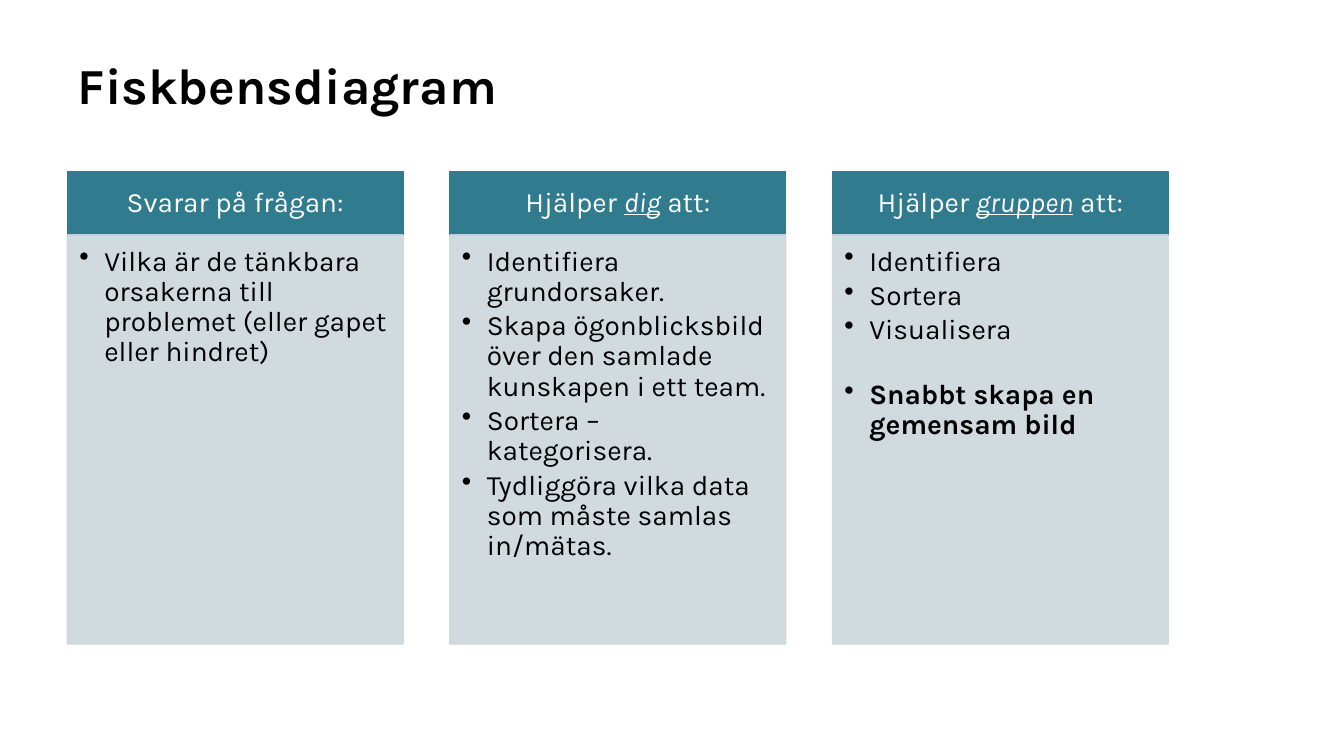
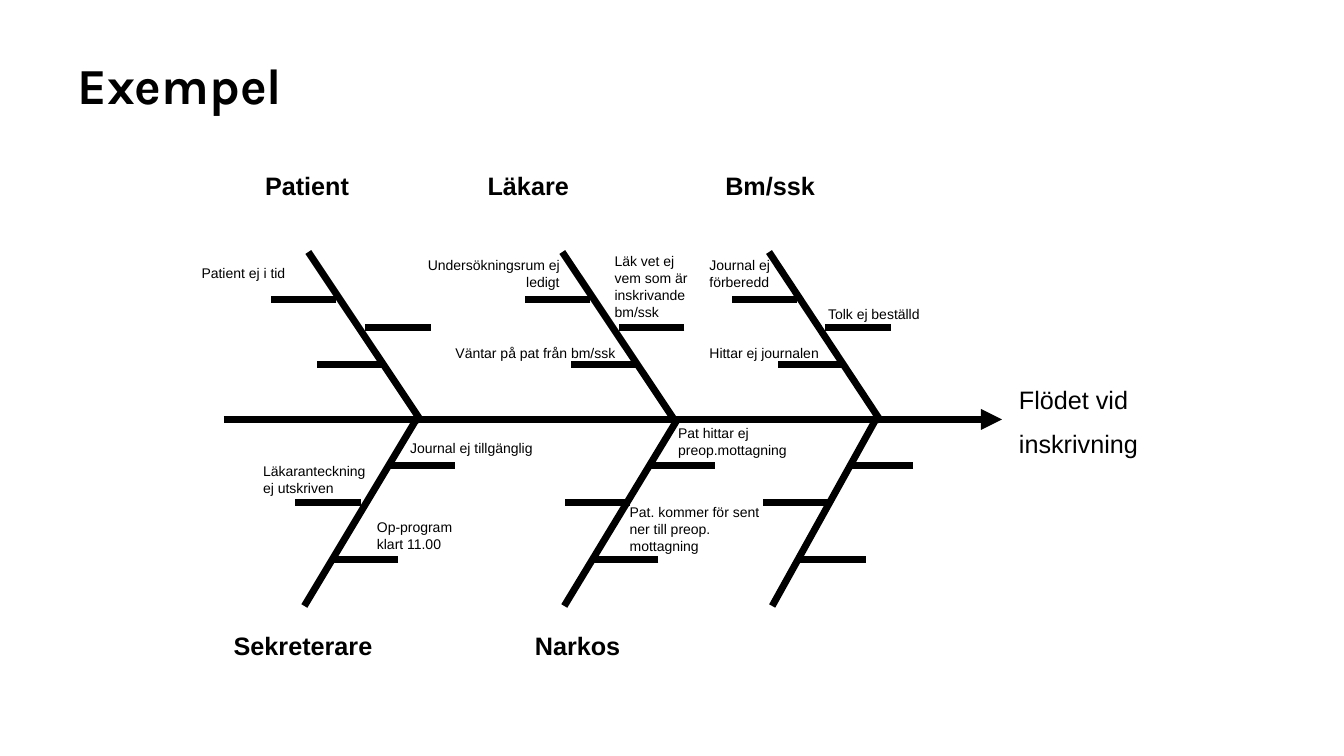
"""Builds two slides about the fishbone diagram."""
from dataclasses import dataclass

from lxml import etree
from pptx import Presentation
from pptx.dml.color import RGBColor
from pptx.enum.dml import MSO_LINE
from pptx.enum.shapes import MSO_CONNECTOR, MSO_SHAPE
from pptx.enum.text import MSO_ANCHOR, MSO_AUTO_SIZE, PP_ALIGN
from pptx.oxml.ns import qn
from pptx.util import Cm, Pt

LEFT, CENTER, RIGHT = PP_ALIGN.LEFT, PP_ALIGN.CENTER, PP_ALIGN.RIGHT
TOP, MIDDLE = MSO_ANCHOR.TOP, MSO_ANCHOR.MIDDLE
FIXED = MSO_AUTO_SIZE.NONE
RECTANGLE, STRAIGHT, SOLID = MSO_SHAPE.RECTANGLE, MSO_CONNECTOR.STRAIGHT, MSO_LINE.SOLID
TITLE_ONLY = 5


@dataclass(frozen=True)
class Theme:
    """Colours, fonts and type sizes of the deck."""
    ink: RGBColor = RGBColor(0x00, 0x00, 0x00)
    paper: RGBColor = RGBColor(0xFF, 0xFF, 0xFF)
    teal: RGBColor = RGBColor(0x30, 0x7C, 0x8E)
    mist: RGBColor = RGBColor(0xCD, 0xD7, 0xDB)
    mist_alpha: int = 90
    main_font: str = "Karla"
    diagram_font: str = "Arial"
    title_size: int = 36
    card_size: int = 20
    heading_size: int = 18
    cause_size: int = 10
    stroke: int = 5


def set_values(target, values):
    """Sets each attribute in values on the target."""
    for name, value in values.items():
        setattr(target, name, value)


class SlideBuilder:
    """Holds the deck, its theme and the current slide."""

    def __init__(self, theme):
        """Starts a wide deck."""
        self.theme = theme
        self.deck = Presentation()
        self.deck.slide_width, self.deck.slide_height = Cm(33.87), Cm(19.05)
        self.page = None

    def start(self, title):
        """Adds a slide with its title."""
        self.page = self.deck.slides.add_slide(self.deck.slide_layouts[TITLE_ONLY])
        box = self.page.shapes.title
        set_values(box, {"left": Cm(1.7), "top": Cm(1), "width": Cm(30.48), "height": Cm(2.08)})
        set_values(box.text_frame, {"auto_size": FIXED, "vertical_anchor": MIDDLE})
        self.add_text(box.text_frame.paragraphs[0], [(title, {"bold": True})],
                      {"alignment": LEFT, "line_spacing": 1.1},
                      self.font(self.theme.main_font, self.theme.title_size))

    def font(self, name, size, color=None, bold=False):
        """Returns font values."""
        return {"name": name, "size": Pt(size), "bold": bold, "color": color or self.theme.ink}

    def add_text(self, para, spans, layout, font):
        """Fills a paragraph with formatted spans."""
        set_values(para, layout)
        for text, changes in spans:
            span = para.add_run()
            span.text = text
            values = {**font, **changes}
            span.font.color.rgb = values.pop("color")
            set_values(span.font, values)

    def panel(self, left, top, width, height, color, frame_values, alpha=100):
        """Adds a filled rectangle and returns its text frame."""
        box = self.page.shapes.add_shape(RECTANGLE, Cm(left), Cm(top), Cm(width), Cm(height))
        box.shadow.inherit = False
        box.line.width = Pt(1)
        for fill in (box.fill, box.line.fill):
            fill.solid()
            fill.fore_color.rgb = color
        if alpha < 100:
            for node in box._element.spPr.iter(qn("a:srgbClr")):
                etree.SubElement(node, qn("a:alpha"), val=str(alpha * 1000))
        set_values(box.text_frame, {"word_wrap": True, **frame_values})
        return box.text_frame

    def card(self, left, heading, items):
        """Adds a heading band above a panel of bullets."""
        theme, width = self.theme, 8.46
        band = self.panel(left, 4.32, width, 1.6, theme.teal, {
            "vertical_anchor": MIDDLE, "margin_left": Cm(0.41), "margin_right": Cm(0.41),
            "margin_top": Cm(0.23), "margin_bottom": Cm(0.23)})
        self.add_text(band.paragraphs[0], heading, {"alignment": CENTER, "line_spacing": 0.9},
                      self.font(theme.main_font, theme.card_size, theme.paper))
        frame = self.panel(left, 5.92, width, 10.31, theme.mist, {
            "vertical_anchor": TOP, "margin_left": Cm(0.3), "margin_right": Cm(0.41),
            "margin_top": Cm(0.3), "margin_bottom": Cm(0.43)}, theme.mist_alpha)
        for index, (text, changes, gap) in enumerate(items):
            para = frame.add_paragraph() if index else frame.paragraphs[0]
            self.bullet(para)
            self.add_text(para, [(text, changes)],
                          {"alignment": LEFT, "line_spacing": 0.9, "space_after": Pt(gap)},
                          self.font(theme.main_font, theme.card_size))

    def bullet(self, para):
        """Gives a paragraph a hanging bullet."""
        properties = para._p.get_or_add_pPr()
        indent = Cm(0.63)
        properties.set("marL", str(indent))
        properties.set("indent", str(-indent))
        etree.SubElement(properties, qn("a:buChar"), char="•")

    def line(self, start, end, arrow=False):
        """Adds a thick straight line, with an arrowhead on request."""
        line = self.page.shapes.add_connector(STRAIGHT, *(Cm(value) for value in (*start, *end)))
        line.line.color.rgb = self.theme.ink
        set_values(line.line, {"width": Pt(self.theme.stroke), "dash_style": SOLID})
        properties = line._element.spPr
        if arrow:
            etree.SubElement(properties.find(qn("a:ln")), qn("a:tailEnd"), type="triangle")
        etree.SubElement(properties, qn("a:effectLst"))

    def bone(self, joint, tip, ribs):
        """Adds a slanted bone with its ribs, each given by its right end."""
        self.line(joint, tip)
        for right, top in ribs:
            self.line((right, top), (right - 1.65, top))

    def label(self, left, top, width, height, lines, size, bold=False, align=LEFT):
        """Adds diagram text, one paragraph a line."""
        box = self.page.shapes.add_textbox(Cm(left), Cm(top), Cm(width), Cm(height))
        frame = box.text_frame
        frame.word_wrap = True
        for index, text in enumerate(lines):
            para = frame.add_paragraph() if index else frame.paragraphs[0]
            layout = {"alignment": align}
            if index:
                layout["space_before"] = Pt(10)
            self.add_text(para, [(text, {})], layout,
                          self.font(self.theme.diagram_font, size, bold=bold))


def build_overview(builder):
    """Builds the slide on what the diagram is for."""
    builder.start("Fiskbensdiagram")
    stress = {"italic": True, "underline": True}
    gap, wide_gap = 3, 24.6
    cards = [
        ([("Svarar på frågan:", {})],
         [("Vilka är de tänkbara orsakerna till problemet (eller gapet eller hindret)", {}, gap)]),
        ([("Hjälper ", {}), ("dig", stress), (" att:", {})],
         [("Identifiera grundorsaker.", {}, gap),
          ("Skapa ögonblicksbild över den samlade kunskapen i ett team.", {}, gap),
          ("Sortera – kategorisera.", {}, gap),
          ("Tydliggöra vilka data som måste samlas in/mätas.", {}, gap)]),
        ([("Hjälper ", {}), ("gruppen", stress), (" att:", {})],
         [("Identifiera", {}, gap), ("Sortera", {}, gap), ("Visualisera", {}, wide_gap),
          ("Snabbt skapa en gemensam bild", {"bold": True}, gap)]),
    ]
    for column, (heading, items) in enumerate(cards):
        builder.card(1.7 + 9.64 * column, heading, items)


def build_example(builder):
    """Builds the slide with a worked fishbone diagram."""
    theme = builder.theme
    builder.start("Exempel")
    builder.line((5.64, 10.57), (25.25, 10.57), arrow=True)
    sides = [
        (10.62, 6.35, (7.54, 9.19, 8.26), [
            (10.62, 7.77, (8.48, 9.65, 10.85)),
            (17.02, 14.17, (14.88, 16.05, 17.25)),
            (22.2, 19.38, (20.09, 21.26, 22.45))]),
        (10.57, 15.27, (12.67, 14.1, 11.73), [
            (10.49, 7.67, (9.09, 10.03, 11.46)),
            (17.07, 14.22, (15.88, 16.59, 18.01)),
            (22.07, 19.46, (20.88, 21.82, 23.01))]),
    ]
    sides[1] = (10.57, 15.27, (12.67, 14.1, 11.73)[:3], sides[1][3])
    for joint_top, tip_top, rib_tops, bones in sides:
        for joint, tip, rib_ends in bones:
            builder.bone((joint, joint_top), (tip, tip_top), zip(rib_ends, rib_tops))

    builder.label(25.43, 9.55, 4.29, 2.16, ["Flödet vid", "inskrivning"], theme.heading_size)
    headings = [
        (6.43, 4.17, "Patient"), (12.04, 4.17, "Läkare"), (18.03, 4.17, "Bm/ssk"),
        (5.64, 15.77, "Sekreterare"), (13.23, 15.77, "Narkos"),
    ]
    for left, top, text in headings:
        builder.label(left, top, 4.8, 1.02, [text], theme.heading_size, bold=True)

    causes = [
        (4.83, 6.55, 3.4, 0.69, "Patient ej i tid", LEFT),
        (6.38, 11.53, 3.2, 1.09, "Läkaranteckning ej utskriven", LEFT),
        (9.96, 10.95, 3.71, 0.69, "Journal ej tillgänglig", RIGHT),
        (9.25, 12.95, 2.79, 1.09, "Op-program klart 11.00", LEFT),
        (10.36, 6.35, 3.99, 1.09, "Undersökningsrum ej ledigt", RIGHT),
        (11.23, 8.56, 4.8, 0.69, "Väntar på pat från bm/ssk", LEFT),
        (15.24, 6.25, 2.74, 1.96, "Läk vet ej vem som är inskrivande bm/ssk", LEFT),
        (17.63, 6.35, 2.2, 1.09, "Journal ej förberedd", LEFT),
        (17.63, 8.56, 4.01, 0.69, "Hittar ej journalen", LEFT),
        (20.62, 7.57, 4.8, 0.69, "Tolk ej beställd", LEFT),
        (16.84, 10.57, 3.81, 1.09, "Pat hittar ej preop.mottagning", LEFT),
        (15.62, 12.57, 3.81, 1.52, "Pat. kommer för sent ner till preop. mottagning", LEFT),
    ]
    for left, top, width, height, text, align in causes:
        builder.label(left, top, width, height, [text], theme.cause_size, align=align)


def main():
    """Builds and saves the deck."""
    builder = SlideBuilder(Theme())
    build_overview(builder)
    build_example(builder)
    builder.deck.save("out.pptx")


if __name__ == "__main__":
    main()
